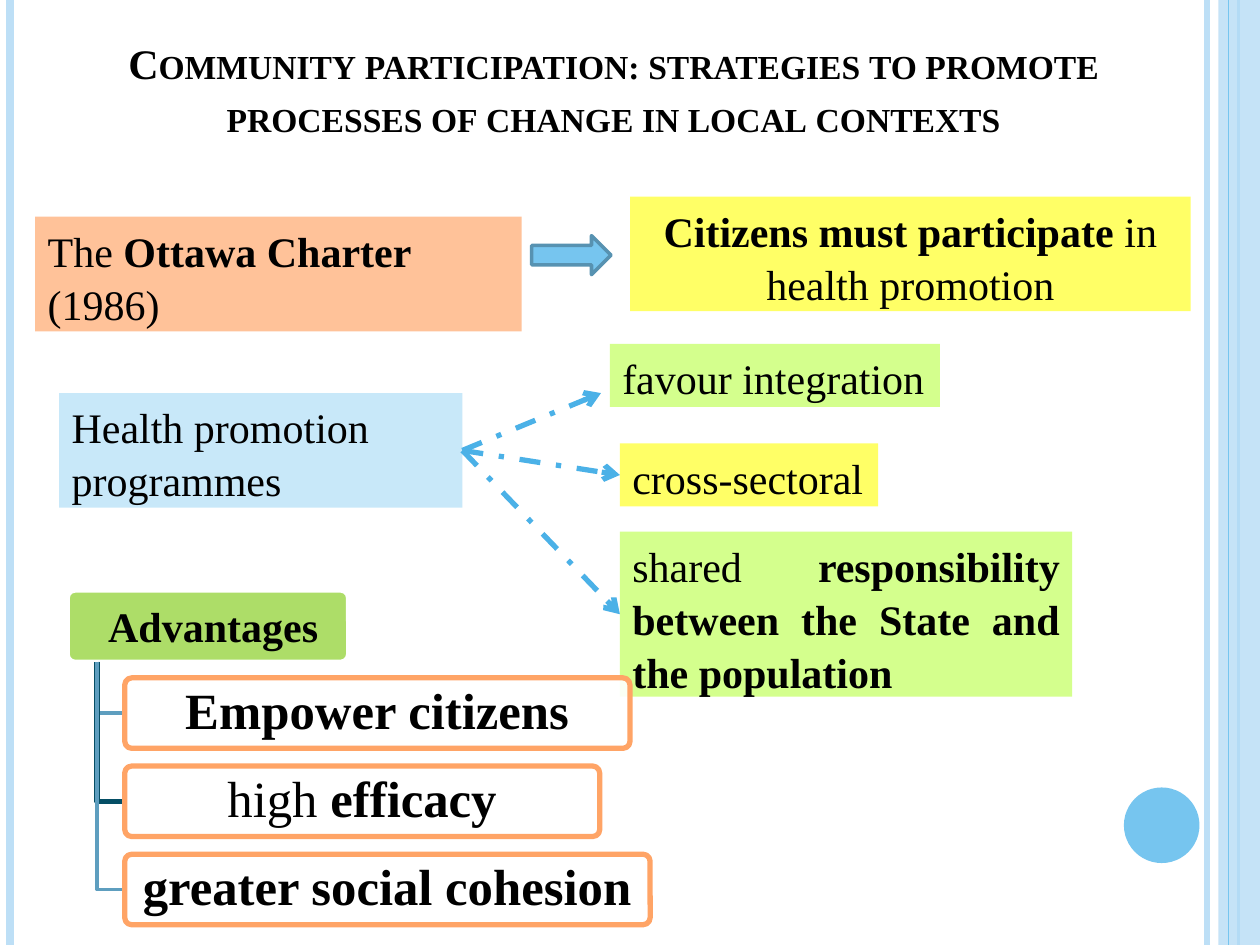
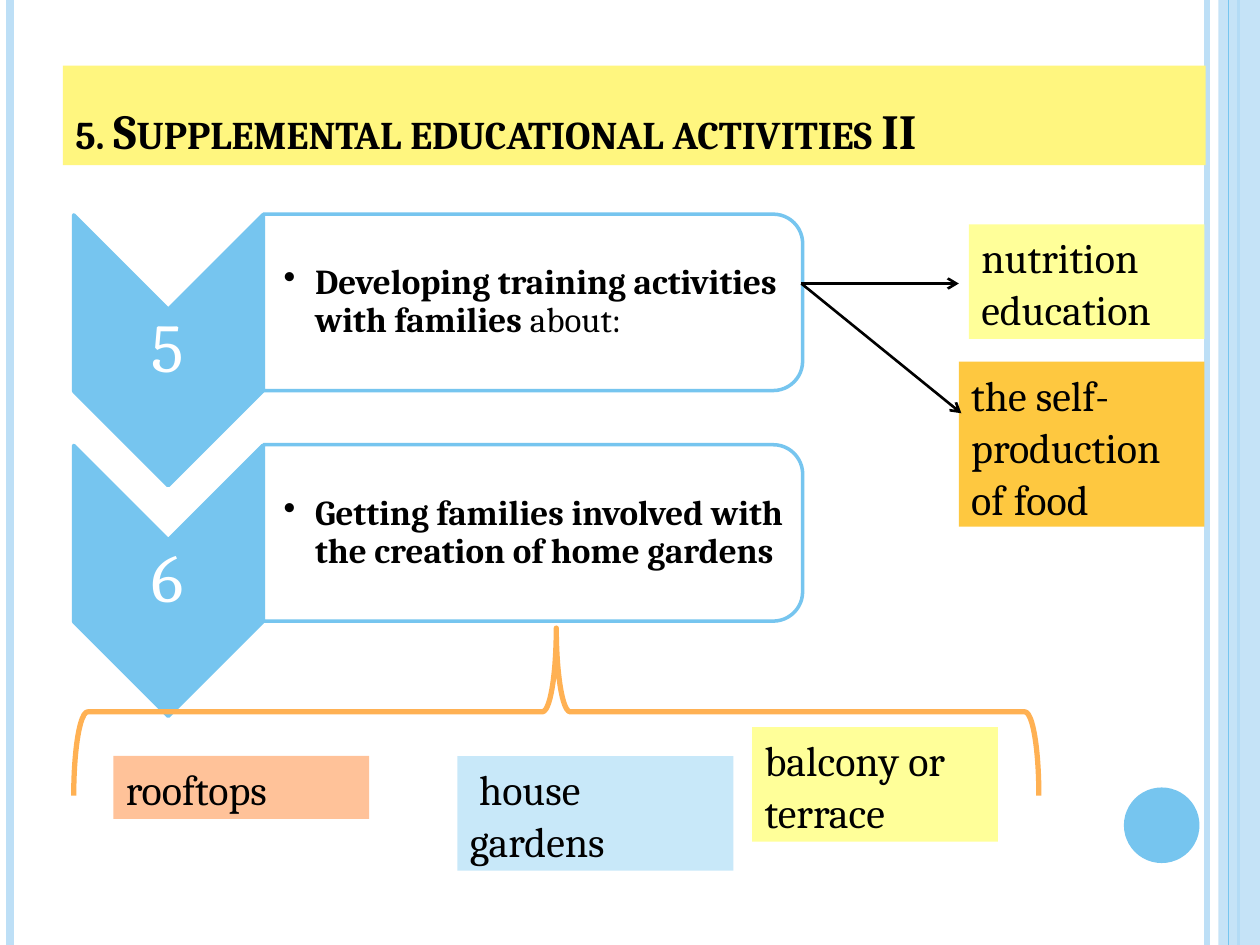
"""Two slides on community participation and educational activities in health promotion."""
from lxml import etree
from pptx import Presentation, util as u
from pptx.dml.color import RGBColor
from pptx.enum import dml, shapes, text
from pptx.oxml.ns import qn

COLORS = {
    "black": "000000", "white": "FFFFFF", "pale": "BDDFF6", "sky": "76C5EF",
    "arrow_edge": "5792B1", "arrow": "4BB1E7", "ice": "C8E8F9", "peach": "FFC299",
    "yellow": "FFFF66", "cream": "FFFF99", "banner": "FFF67F", "amber": "FEC840",
    "lime": "D4FF8D", "green": "ADDD68", "orange": "FFA466", "brace": "FFB153",
    "steel": "5E9EBF", "petrol": "054E65",
}
RGB = {name: RGBColor.from_string(value) for name, value in COLORS.items()}
SERIF, CAMBRIA = "Times New Roman", "Cambria"
LEADING = {SERIF: 1.05, CAMBRIA: 1.03}
KIND, ALIGN, ANCHOR = shapes.MSO_SHAPE, text.PP_ALIGN, text.MSO_ANCHOR


def add_box(slide, at, runs=(), kind=KIND.RECTANGLE, fill=None, alpha=None, line=None, turn=0, adjust=None,
            font=SERIF, size=24, color="black", align=ALIGN.LEFT, anchor=ANCHOR.TOP,
            insets=(0.1, 0.05, 0.1, 0.05), spacing=None, small_caps=False, bullet=False):
    frame = [u.Inches(v) for v in at]
    if kind is None:
        box = slide.shapes.add_textbox(*frame)
    else:
        box = slide.shapes.add_shape(kind, *frame)
        box.shadow.inherit = False
        box.rotation = turn
    if adjust is not None:
        box.adjustments[0] = adjust
    if fill:
        box.fill.solid()
        box.fill.fore_color.rgb = RGB[fill]
    else:
        box.fill.background()
    if alpha:
        tint = box.fill._xPr.find(".//" + qn("a:srgbClr"))
        etree.SubElement(tint, qn("a:alpha"), val=str(alpha * 1000))
    if line:
        box.line.color.rgb, box.line.width = RGB[line[0]], u.Pt(line[1])
    else:
        box.line.fill.background()
    if not runs:
        return box
    body = box.text_frame
    body.word_wrap, body.vertical_anchor = True, anchor
    body.margin_left, body.margin_top, body.margin_right, body.margin_bottom = map(u.Inches, insets)
    paragraph = body.paragraphs[0]
    paragraph.alignment = align
    paragraph.line_spacing = spacing or LEADING[font]
    if bullet:
        props = paragraph._p.get_or_add_pPr()
        props.set("marL", str(u.Inches(0.25)))
        props.set("indent", str(-u.Inches(0.25)))
        etree.SubElement(props, qn("a:buChar"), char="•")
    for words, bold in runs:
        run = paragraph.add_run()
        run.text = words
        run.font.name, run.font.size, run.font.bold = font, u.Pt(size), bold
        run.font.color.rgb = RGB[color]
        if small_caps:
            run.font._element.set("cap", "small")
    return box


def add_line(slide, start, end, color, width, dash=None, arrow=False):
    line = slide.shapes.add_connector(shapes.MSO_CONNECTOR.STRAIGHT, *map(u.Inches, start + end))
    line.line.color.rgb, line.line.width = RGB[color], u.Pt(width)
    if dash:
        line.line.dash_style = dash
    if arrow:
        etree.SubElement(line.line._get_or_add_ln(), qn("a:tailEnd"), type="arrow")
    etree.SubElement(line._element.spPr, qn("a:effectLst"))
    return line


deck = Presentation()
deck.slide_width, deck.slide_height = u.Inches(10), u.Inches(7.5)
blank = deck.slide_layouts[6]
participation, activities = [deck.slides.add_slide(blank) for _ in range(2)]

for slide in (participation, activities):
    for x, color, width in ((9.58, "pale", 3), (0.08, "pale", 4.5), (9.83, "sky", 1.5)):
        add_line(slide, (x, 0), (x, 7.5), color, width)
    add_box(slide, (9.67, 0, 0.33, 7.5), fill="pale", alpha=87)
    add_line(slide, (9.75, 0), (9.75, 7.5), "sky", 0.75)
    add_box(slide, (8.92, 6.25, 0.6, 0.6), kind=KIND.OVAL, fill="sky")

headline = "Community participation: strategies to promote processes of change in local contexts"
add_box(participation, (0.47, 0.23, 8.8, 0.94), [(headline, True)], None,
        align=ALIGN.CENTER, anchor=ANCHOR.BOTTOM, small_caps=True)

add_box(participation, (0.28, 1.72, 3.86, 0.91),
        [("The ", False), ("Ottawa Charter ", True), ("(1986)", False)], fill="peach")
add_box(participation, (5, 1.56, 4.45, 0.91),
        [("Citizens must participate", True), (" in health promotion", False)],
        fill="yellow", align=ALIGN.CENTER)
add_box(participation, (4.22, 1.87, 0.63, 0.31), kind=KIND.RIGHT_ARROW, fill="sky", line=("arrow_edge", 2))

programmes = add_box(participation, (0.47, 3.12, 3.2, 0.91), [("Health promotion programmes", False)], fill="ice")
add_box(participation, (4.84, 2.73, 2.62, 0.5), [("favour integration", False)], fill="lime")
cross_sectoral = add_box(participation, (4.92, 3.52, 2.05, 0.5), [("cross-sectoral", False)], fill="yellow")
responsibility = add_box(
    participation, (4.92, 4.22, 3.59, 1.31),
    [("shared ", False), ("responsibility between the State and the population", True)],
    fill="lime", align=ALIGN.JUSTIFY)
for end, goal in (((4.77, 3.12), None), ((4.92, 3.77), cross_sectoral), ((4.92, 4.88), responsibility)):
    link = add_line(participation, (3.67, 3.58), end, "arrow", 3, dml.MSO_LINE.DASH_DOT, True)
    link.begin_connect(programmes, 3)
    if goal:
        link.end_connect(goal, 1)

add_box(participation, (0.54, 4.69, 2.22, 0.56), [(" ", False), ("Advantages", True)],
        KIND.ROUNDED_RECTANGLE, "green", line=("white", 2), adjust=0.1, align=ALIGN.CENTER,
        anchor=ANCHOR.MIDDLE, insets=(0.07, 0.05, 0.07, 0.05), spacing=1)
advantages = [
    ([("Empower citizens", True)], 4.01, ("steel", 2)),
    ([("high ", False), ("efficacy", True)], 3.77, ("petrol", 3)),
    ([("greater social cohesion", True)], 4.17, ("steel", 2)),
]
for row, (runs, width, (branch_color, branch_width)) in enumerate(advantages):
    top = 5.38 + 0.7 * row
    corner = u.Inches(0.77), u.Inches(top + 0.28)
    path = participation.shapes.build_freeform(corner[0], u.Inches(5.25))
    path.add_line_segments([corner, (u.Inches(0.99), corner[1])], close=False)
    branch = path.convert_to_shape()
    branch.shadow.inherit = False
    branch.fill.background()
    branch.line.color.rgb, branch.line.width = RGB[branch_color], u.Pt(branch_width)
    add_box(participation, (0.99, top, width, 0.56), runs, KIND.ROUNDED_RECTANGLE, "white", 90,
            ("orange", 3), adjust=0.1, size=29, align=ALIGN.CENTER, anchor=ANCHOR.MIDDLE,
            insets=(0.07, 0.06, 0.07, 0.06), spacing=0.9)

add_box(activities, (0.5, 0.52, 9.07, 0.79), [("5. Supplemental educational activities II", True)], None,
        "banner", font=CAMBRIA, size=28, anchor=ANCHOR.BOTTOM, spacing=1, small_caps=True)

steps = [
    ("5", [("Developing training activities with families ", True), ("about:", False)]),
    ("6", [("Getting families involved with the creation of home gardens", True)]),
]
for row, (number, runs) in enumerate(steps):
    drop = 1.83 * row
    add_box(activities, (0.26, 2.03 + drop, 2.15, 1.5), kind=KIND.CHEVRON, fill="sky", line=("sky", 2), turn=90)
    add_box(activities, (0.58, 2.46 + drop, 1.5, 0.64), [(number, False)], None, font=CAMBRIA, size=39,
            color="white", align=ALIGN.CENTER, anchor=ANCHOR.MIDDLE, insets=[0.03] * 4, spacing=0.9)
    add_box(activities, (3.53, 0.26 + drop, 1.4, 4.28), kind=KIND.ROUND_2_SAME_RECTANGLE,
            fill="white", alpha=90, line=("sky", 2), turn=90)
    add_box(activities, (2.09, 1.77 + drop, 4.21, 1.26), runs, None, font=CAMBRIA, size=20,
            anchor=ANCHOR.MIDDLE, insets=(0.16, 0.01, 0.01, 0.01), spacing=0.9, bullet=True)

topics = [
    (" house gardens", (3.63, 6, 2.19, 0.91), "ice"),
    ("rooftops", (0.9, 6, 2.03, 0.5), "peach"),
    ("balcony or terrace", (5.97, 5.77, 1.95, 0.91), "cream"),
    ("nutrition education", (7.69, 1.78, 1.87, 0.91), "cream"),
    ("the self-production of food", (7.61, 2.87, 1.95, 1.31), "amber"),
]
for words, at, fill in topics:
    add_box(activities, at, [(words, False)], fill=fill, font=CAMBRIA)
add_box(activities, (3.75, 1.82, 1.33, 7.66), kind=KIND.LEFT_BRACE, line=("brace", 3), turn=90)
for end in ((7.61, 2.25), (7.63, 3.28)):
    add_line(activities, (6.36, 2.25), end, "black", 1.5, arrow=True)

deck.save("out.pptx")
